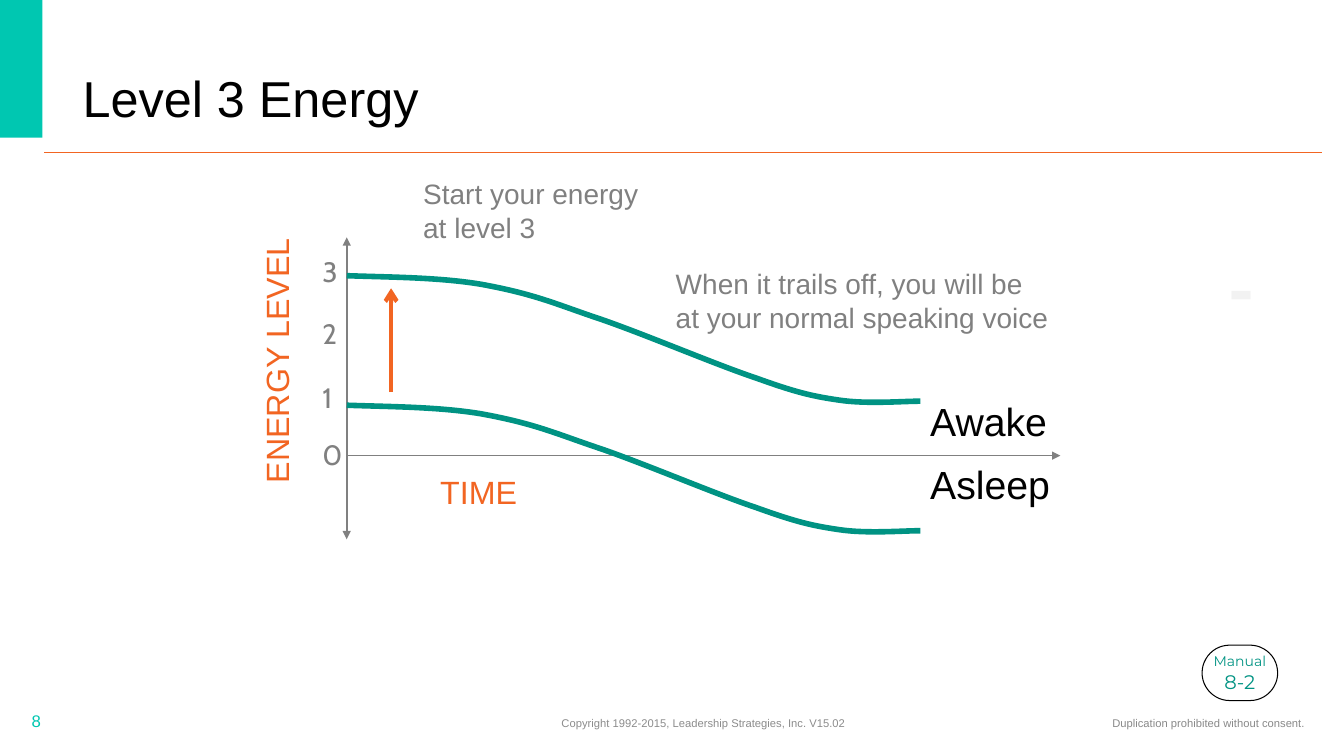
from dataclasses import dataclass
from lxml import etree
from pptx import Presentation
from pptx.dml.color import RGBColor
from pptx.enum import shapes, text
from pptx.oxml import ns
from pptx import util as u


@dataclass(frozen=True)
class Theme:
    black: str = "000000"
    white: str = "FFFFFF"
    gray: str = "808080"
    note: str = "898989"
    copy: str = "8C8C8C"
    pale: str = "F2F2F2"
    mint: str = "00C7B1"
    teal: str = "009383"
    coral: str = "F26522"
    sans: str = "Arial"
    digit: str = "Cabin"
    round: str = "Montserrat"
    title: int = 36
    state: int = 28
    axis: int = 23
    body: int = 20
    page: int = 12
    foot: int = 8
    tag: int = 10
    ref: int = 14
    dash: int = 48


T = Theme()
LEFT, CENTER, RIGHT = text.PP_ALIGN.LEFT, text.PP_ALIGN.CENTER, text.PP_ALIGN.RIGHT
TOP, MID, LOW = text.MSO_ANCHOR.TOP, text.MSO_ANCHOR.MIDDLE, text.MSO_ANCHOR.BOTTOM
COLS, ROWS = 133.33, 75
AXIS, BASE, END = 34.4, 45.2, 91.3
DROP = 12.85
START = (AXIS, 27.35)
BENDS = [
    (38.6, 27.5), (43.5, 27.5), (47.7, 28.2),
    (53.2, 29.2), (55.2, 30.2), (59.7, 31.7),
    (64.3, 33.3), (71.1, 36.2), (75, 37.5),
    (78.9, 38.9), (80.5, 39.3), (83.3, 39.7),
    (86, 40.1), (89.6, 39.8), (END, 39.8),
]


def cell(n):
    return u.Inches(n / 10)


def ink(color):
    return RGBColor.from_string(color)


def style(runs, size, color, font, bold=False):
    for run in runs:
        run.font.size = u.Pt(size)
        run.font.name = font
        run.font.bold = bold
        run.font.color.rgb = ink(color)


def label(slide, words, at, size, color, font=T.sans, align=LEFT,
          anchor=TOP, wrap=False, grow=True, turn=0, bold=False):
    box = slide.shapes.add_textbox(*map(cell, at))
    box.rotation = turn
    frame = box.text_frame
    frame.text = words
    frame.word_wrap = wrap
    frame.vertical_anchor = anchor
    fit = text.MSO_AUTO_SIZE
    frame.auto_size = fit.SHAPE_TO_FIT_TEXT if grow else fit.NONE
    para = frame.paragraphs[0]
    para.alignment = align
    style(para.runs, size, color, font, bold)
    return para


def block(slide, kind, at, fill, edge=None):
    shape = slide.shapes.add_shape(kind, *map(cell, at))
    shape.shadow.inherit = False
    shape.fill.solid()
    shape.fill.fore_color.rgb = ink(fill)
    if edge:
        shape.line.color.rgb = ink(edge)
        shape.line.width = u.Pt(0.75)
    else:
        shape.line.fill.background()
    return shape


def rule(slide, start, end, color, width, head=None, tail=None):
    line = slide.shapes.add_connector(
        shapes.MSO_CONNECTOR.STRAIGHT, *map(cell, (*start, *end)))
    line.line.color.rgb = ink(color)
    line.line.width = u.Pt(width)
    pen = line.line._get_or_add_ln()
    for tag, kind in (("a:headEnd", head), ("a:tailEnd", tail)):
        if kind:
            etree.SubElement(pen, ns.qn(tag), type=kind)
    etree.SubElement(line._element.spPr, ns.qn("a:effectLst"))


def bend(shape):
    legs = list(shape._element.iter(ns.qn("a:lnTo")))
    for first in range(0, len(legs), 3):
        trio = legs[first:first + 3]
        arc = etree.Element(ns.qn("a:cubicBezTo"))
        trio[0].addprevious(arc)
        for leg in trio:
            arc.append(leg[0])
            leg.getparent().remove(leg)


def curve(slide, shift):
    pen = slide.shapes.build_freeform(cell(START[0]), cell(START[1] + shift))
    pen.add_line_segments([(cell(x), cell(y + shift)) for x, y in BENDS], close=False)
    shape = pen.convert_to_shape()
    bend(shape)
    shape.shadow.inherit = False
    shape.fill.background()
    shape.line.color.rgb = ink(T.teal)
    shape.line.width = u.Pt(4)


def badge(slide):
    pill = block(slide, shapes.MSO_SHAPE.ROUNDED_RECTANGLE,
                 (119.25, 64, 7.5, 5.5), T.white, T.black)
    pill.adjustments[0] = 0.5
    frame = pill.text_frame
    frame.text = "Manual\v8-2"
    frame.word_wrap = False
    frame.vertical_anchor = MID
    para = frame.paragraphs[0]
    para.alignment = CENTER
    style(para.runs, T.tag, T.teal, T.round)
    para.runs[1].font.size = u.Pt(T.ref)


def frame(slide):
    label(slide, "Duplication prohibited without consent.", (74.15, 69.75, 56.3, 4),
          T.foot, T.note, align=RIGHT, anchor=MID, wrap=True, grow=False)
    block(slide, shapes.MSO_SHAPE.RECTANGLE, (-0.2, -0.2, 4.4, 13.85), T.mint)
    rule(slide, (4.4, 15.1), (131.15, 15.1), T.coral, 0.5)
    title = label(slide, "Level 3 Energy", (7.2, 5.65, 81.2, 7.6), T.title, T.black,
                  anchor=LOW, wrap=True, grow=False)
    title.line_spacing = 0.9
    label(slide, "8", (2.15, 69.5, 30, 4), T.page, T.mint,
          anchor=MID, wrap=True, grow=False)
    label(slide, "Copyright 1992-2015, Leadership Strategies, Inc. V15.02 ",
          (36.15, 69.75, 67.6, 4), T.foot, T.copy,
          align=CENTER, anchor=MID, wrap=True, grow=False)


def graph(slide):
    rule(slide, (AXIS, 53.5), (AXIS, 23.55), T.gray, 1.25, "triangle", "triangle")
    label(slide, "TIME", (42.65, 46.4, 9.7, 4.9), T.axis, T.coral, align=CENTER)
    label(slide, "ENERGY LEVEL", (14.2, 33.35, 26.5, 4.9), T.axis, T.coral,
          align=CENTER, turn=270)
    for mark, top in enumerate((42.9, 37.3, 30.9, 24.8)):
        label(slide, str(mark), (31, top, 3.7, 4.4), T.body, T.gray, T.digit)
    label(slide, "Awake", (END, 38.9, 13.7, 5.7), T.state, T.black)
    label(slide, "Asleep", (END, 45.2, 14, 5.7), T.state, T.black)
    rule(slide, (AXIS, BASE), (105.2, BASE), T.gray, 1.25, tail="triangle")
    label(slide, "Start your energy\vat level 3", (41, 17.03, 39.4, 7.7),
          T.body, T.gray, wrap=True)
    label(slide, "When it trails off, you will be at your normal speaking voice",
          (66.05, 25.95, 39.2, 7.7), T.body, T.gray, wrap=True)
    for shift in (DROP, 0):
        curve(slide, shift)
    rule(slide, (38.8, 38.9), (38.8, 28.6), T.coral, 3, tail="arrow")


def main():
    deck = Presentation()
    deck.slide_width, deck.slide_height = cell(COLS), cell(ROWS)
    slide = deck.slides.add_slide(deck.slide_layouts[6])
    frame(slide)
    graph(slide)
    badge(slide)
    label(slide, "-", (120.85, 24, 4.3, 9.1), T.dash, T.pale, T.round, bold=True)
    deck.save("out.pptx")


if __name__ == "__main__":
    main()
